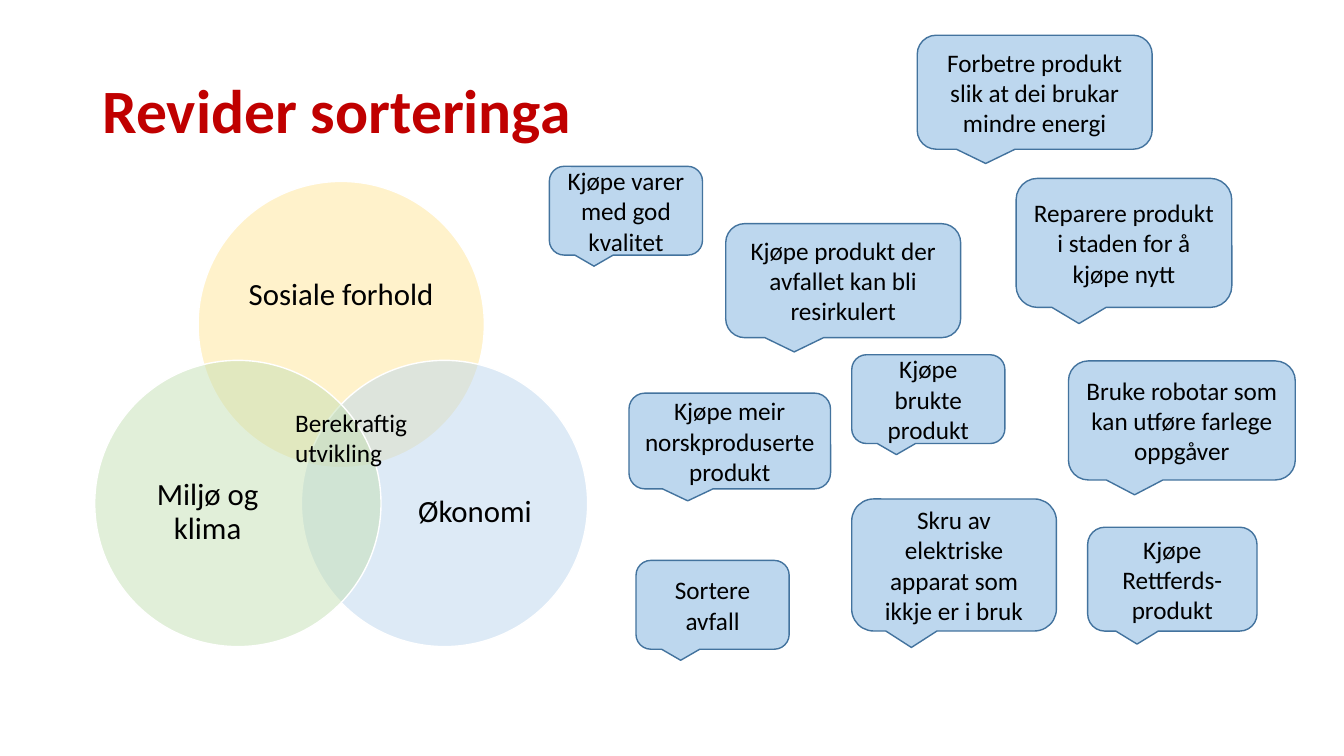
import pptx
import pptx.dml.color
import pptx.enum.shapes
import pptx.enum.text
import pptx.oxml
import pptx.oxml.ns
import pptx.util

Pt = pptx.util.Pt
SHAPE = pptx.enum.shapes.MSO_SHAPE
ALIGN = pptx.enum.text.PP_ALIGN
MIDDLE = pptx.enum.text.MSO_ANCHOR.MIDDLE
TOP = pptx.enum.text.MSO_ANCHOR.TOP

COLORS = {
    "title": "C00000",
    "text": "000000",
    "social": "FFE699",
    "economy": "BDD7EE",
    "climate": "C5E0B4",
    "circle_line": "FFFFFF",
    "callout": "BDD7EE",
    "callout_line": "43739E",
}

# Left, top, width and height in points, then the wording
MEASURES = [
    (392.4, 118.8, 109.4, 63.4, "Kjøpe varer med god kvalitet"),
    (518.4, 159.8, 167.8, 81.4, "Kjøpe produkt der avfallet kan bli resirkulert"),
    (655.2, 25.2, 167.8, 81.4, "Forbetre produkt slik at dei brukar mindre energi"),
    (725.8, 127.4, 154.1, 92.2, "Reparere produkt i staden for å kjøpe nytt"),
    (449.3, 280.8, 144, 68.4, "Kjøpe meir norskproduserte produkt"),
    (608.4, 253.4, 109.4, 63.4, "Kjøpe brukte produkt"),
    (763.2, 257.8, 162, 85, "Bruke robotar som kan utføre farlege oppgåver"),
    (454.3, 400.3, 109.4, 63.4, "Sortere avfall"),
    (608.4, 356.4, 146.2, 94.3, "Skru av elektriske apparat som ikkje er i bruk"),
    (776.9, 376.6, 121, 74.2, "Kjøpe Rettferds-produkt"),
]


def rgb(name):
    return pptx.dml.color.RGBColor.from_string(COLORS[name])


def points(*lengths):
    return [Pt(length) for length in lengths]


def apply(target, values):
    for name, value in values.items():
        setattr(target, name, value)


def write(frame, text, size, color="text", bold=False, align=ALIGN.CENTER,
          spacing=1.0, anchor=MIDDLE, inset=None):
    apply(frame, {"word_wrap": True, "vertical_anchor": anchor,
                  "auto_size": pptx.enum.text.MSO_AUTO_SIZE.NONE})
    if inset is not None:
        sides = ("left", "top", "right", "bottom")
        apply(frame, {f"margin_{side}": Pt(inset) for side in sides})
    paragraph = frame.paragraphs[0]
    apply(paragraph, {"alignment": align, "line_spacing": spacing})
    run = paragraph.add_run()
    run.text = text
    apply(run.font, {"name": "Calibri", "size": Pt(size), "bold": bold})
    run.font.color.rgb = rgb(color)


def add_filled(shapes, preset, box, fill, line):
    shape = shapes.add_shape(preset, *points(*box))
    shape.shadow.inherit = False
    shape.fill.solid()
    shape.fill.fore_color.rgb = rgb(fill)
    shape.line.color.rgb = rgb(line)
    shape.line.width = Pt(1)
    return shape


def make_half_transparent(shape):
    tint = shape.fill._xPr.find(".//" + pptx.oxml.ns.qn("a:srgbClr"))
    tint.append(pptx.oxml.parse_xml(
        f'<a:alpha {pptx.oxml.ns.nsdecls("a")} val="50000"/>'))


def add_title(slide, left, top, width, height):
    title = slide.shapes.title
    box = points(left, top, width, height)
    apply(title, dict(zip(("left", "top", "width", "height"), box)))
    write(title.text_frame, "Revider sorteringa", 44, "title", bold=True,
          align=ALIGN.LEFT, spacing=0.9)


def add_venn(slide, left, top, diameter):
    """Place three overlapping circles; label boxes are fractions of a diameter."""
    step, drop = 0.7217 * diameter, 0.625 * diameter
    circles = [
        ("social", "Sosiale forhold", step / 2, 0, (0.133, 0.175, 0.733, 0.45)),
        ("economy", "Økonomi", step, drop, (0.306, 0.257, 0.6, 0.55)),
        ("climate", "Miljø og klima", 0, drop, (0.094, 0.257, 0.6, 0.55)),
    ]
    venn = slide.shapes.add_group_shape()
    for fill, text, dx, dy, (x, y, width, height) in circles:
        box = (left + dx, top + dy, diameter, diameter)
        circle = add_filled(venn.shapes, SHAPE.OVAL, box, fill, "circle_line")
        make_half_transparent(circle)
        label = venn.shapes.add_textbox(*points(
            box[0] + x * diameter, box[1] + y * diameter,
            width * diameter, height * diameter))
        write(label.text_frame, text, 22, spacing=0.9, inset=0)
    overlap = slide.shapes.add_textbox(*points(
        left + 136, top + 157.7, 106.6, 51.1))
    write(overlap.text_frame, "Berekraftig utvikling", 18, align=ALIGN.LEFT,
          anchor=TOP)


def add_callout(slide, left, top, width, height, text):
    callout = add_filled(slide.shapes, SHAPE.ROUNDED_RECTANGULAR_CALLOUT,
                         (left, top, width, height), "callout", "callout_line")
    write(callout.text_frame, text, 18)


def main():
    deck = pptx.Presentation()
    apply(deck, {"slide_width": Pt(960), "slide_height": Pt(540)})
    slide = deck.slides.add_slide(deck.slide_layouts.get_by_name("Title Only"))
    add_title(slide, 66, 28.75, 828, 104.4)
    add_venn(slide, 67.7, 129.6, 204.5)
    for measure in MEASURES:
        add_callout(slide, *measure)
    deck.save("out.pptx")


if __name__ == "__main__":
    main()
